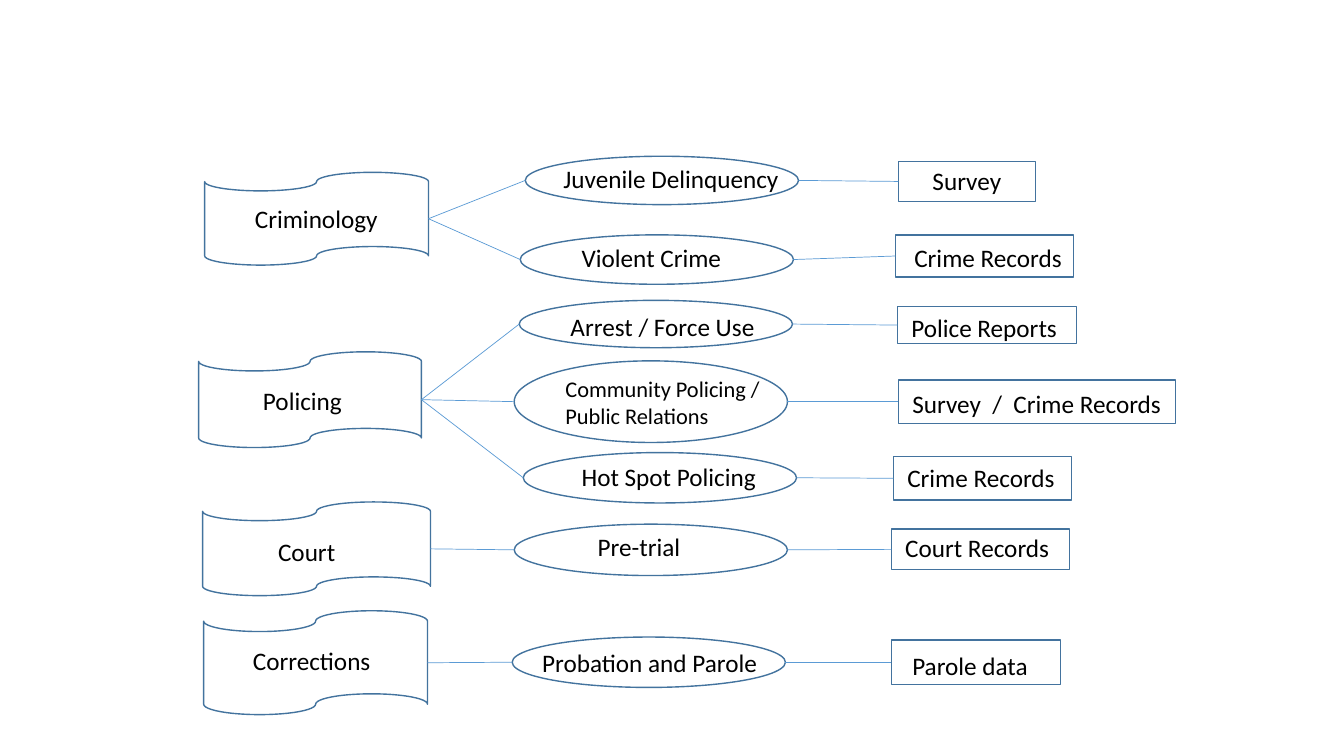
"""Build a slide linking criminal justice fields to research topics and data sources."""
import pptx
import pptx.dml.color
import pptx.enum.shapes
import pptx.oxml
import pptx.oxml.ns
import pptx.util

CELL = pptx.util.Inches(0.1)
TAPE = pptx.enum.shapes.MSO_SHAPE.FLOWCHART_PUNCHED_TAPE
OVAL = pptx.enum.shapes.MSO_SHAPE.OVAL
RECT = pptx.enum.shapes.MSO_SHAPE.RECTANGLE


def color(value):
    return pptx.dml.color.RGBColor.from_string(value)


def add_node(kind, box, label, text_box, size=18):
    sp = slide.shapes.add_shape(kind, *[round(n * CELL) for n in box])
    sp.shadow.inherit = False
    sp.fill.background()
    sp.line.color.rgb = color("43739E")
    sp.line.width = pptx.util.Pt(1)
    tb = slide.shapes.add_textbox(*[round(n * CELL) for n in text_box])
    tf = tb.text_frame
    tf.word_wrap = True
    tf.text = label
    r = tf.paragraphs[0].runs[0]
    r.font.name = "Calibri"
    r.font.size = pptx.util.Pt(size)
    r.font.color.rgb = color("000000")
    return sp


prs = pptx.Presentation()
prs.slide_width = pptx.util.Inches(13.33)
prs.slide_height = pptx.util.Inches(7.5)
slide = prs.slides.add_slide(prs.slide_layouts[6])

# Boxes are left, top, width, height in grid cells: outline first, then text.
fields = {
    "Criminology": ((20.3, 17.1, 22.2, 9.2), (24.3, 19.7, 23.5, 4)),
    "Policing": ((19.7, 34.9, 22.1, 9.5), (25.1, 37.7, 11.2, 4)),
    "Court": ((20.1, 49.8, 22.6, 9.3), (26.6, 52.7, 9.7, 4)),
    "Corrections": ((20.2, 60.6, 22.2, 10.3), (24.1, 63.5, 15, 4)),
}
topics = [
    ("Criminology", "Juvenile Delinquency", (52.1, 15.5, 27.1, 4.8), (54.9, 15.7, 23.9, 4)),
    ("Criminology", "Violent Crime", (51.6, 23.3, 27.1, 4.9), (56.7, 23.5, 18.9, 4)),
    ("Policing", "Arrest / Force Use", (51.5, 29.8, 27.1, 4.7), (55.6, 30.4, 21.8, 4)),
    ("Policing", "Community Policing / Public Relations", (51, 35.8, 27.1, 8.1), (55.1, 36.7, 23.4, 6.4)),
    ("Policing", "Hot Spot Policing", (51.9, 44.9, 27.1, 5), (56.7, 45.3, 20.4, 4)),
    ("Court", "Pre-trial", (51, 52, 27.1, 5.1), (58.3, 52.2, 12.4, 4.4)),
    ("Corrections", "Probation and Parole", (50.8, 63.2, 27.1, 5), (52.8, 63.7, 26.3, 4)),
]
sources = [
    ("Survey", (89.1, 16, 13.6, 4), (91.5, 15.9, 10.8, 4)),
    ("Crime Records", (88.8, 23.3, 17.7, 4.2), (89.7, 23.5, 17.7, 4)),
    ("Police Reports", (89, 30.4, 17.8, 3.7), (89.4, 30.5, 16.7, 4)),
    ("Survey  /  Crime Records", (89.1, 37.7, 27.5, 4.3), (89.5, 38, 27.1, 4)),
    ("Crime Records", (88.6, 45.3, 17.7, 4.3), (89, 45.4, 17.2, 4)),
    ("Court Records", (88.4, 52.5, 17.7, 4), (88.8, 52.3, 17, 4)),
    ("Parole data", (88.4, 63.5, 16.8, 4.4), (89.5, 64, 13.6, 4)),
]

tapes = {label: add_node(TAPE, box, label, text_box)
         for label, (box, text_box) in fields.items()}
links = []
for (field, topic, oval_box, topic_box), (source, rect_box, source_box) in zip(topics, sources):
    oval = add_node(OVAL, oval_box, topic, topic_box, 16 if "Community" in topic else 18)
    rect = add_node(RECT, rect_box, source, source_box)
    links += [(tapes[field], oval), (oval, rect)]

for a, b in links:
    line = slide.shapes.add_connector(
        pptx.enum.shapes.MSO_CONNECTOR.STRAIGHT,
        a.left + a.width, a.top + a.height // 2, b.left, b.top + b.height // 2)
    line.line.color.rgb = color("5B9BD5")
    line.line.width = pptx.util.Pt(0.5)
    line.element.spPr.append(pptx.oxml.parse_xml(
        f"<a:effectLst {pptx.oxml.ns.nsdecls('a')}/>"))

prs.save("out.pptx")
